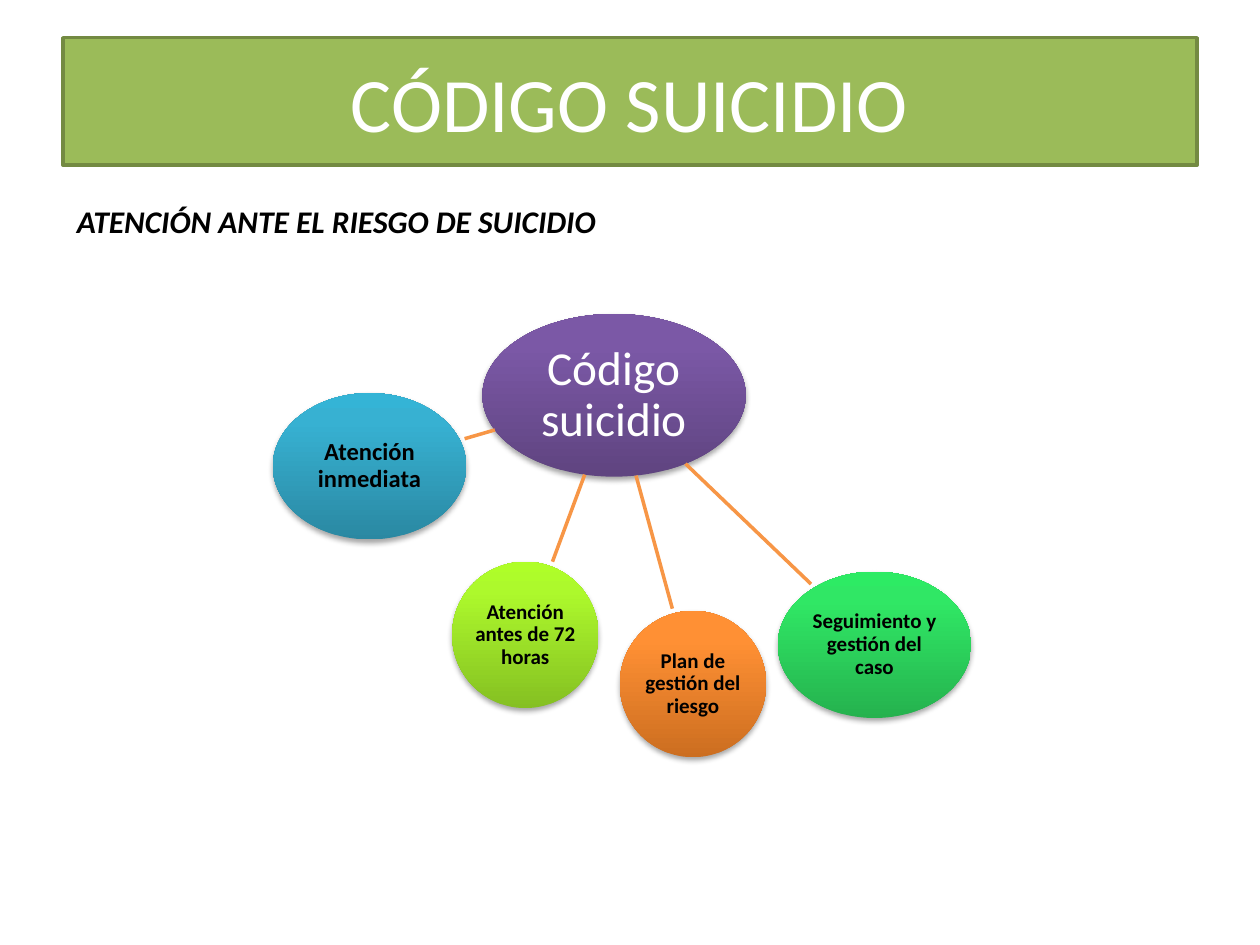
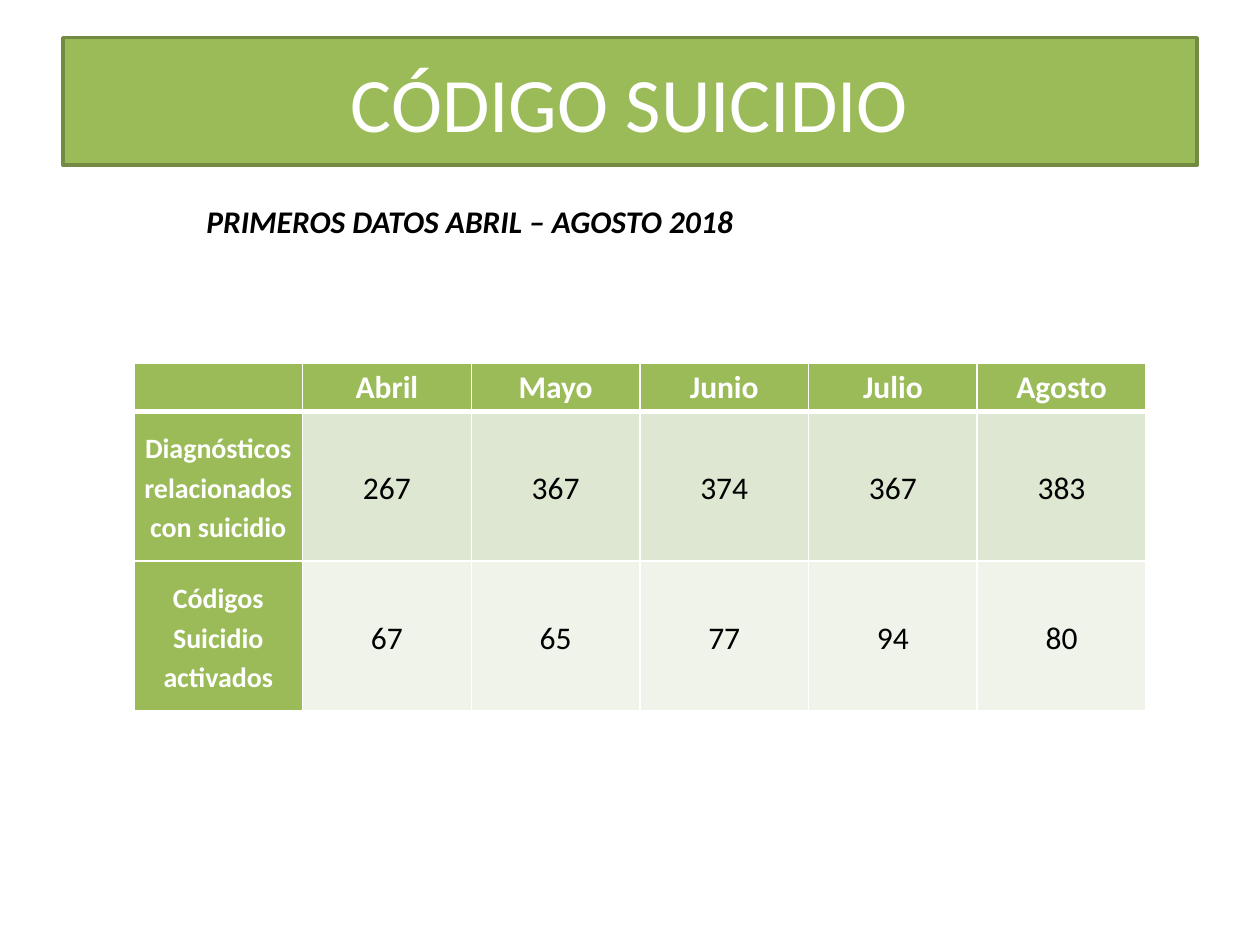
from copy import deepcopy
from math import hypot

from lxml.etree import SubElement
from pptx import Presentation
from pptx.dml.color import RGBColor
from pptx.enum.shapes import MSO_CONNECTOR as Connector, MSO_SHAPE as Shape
from pptx.enum.text import MSO_ANCHOR as Anchor, PP_ALIGN as Align
from pptx.oxml.ns import qn
from pptx.util import Cm, Pt

# Shared look
FONT = "Calibri"
WHITE = RGBColor(0xFF, 0xFF, 0xFF)
BLACK = RGBColor(0x00, 0x00, 0x00)
GREEN = RGBColor(0x9B, 0xBB, 0x59)
DARK_GREEN = RGBColor(0x73, 0x8A, 0x42)
ORANGE = RGBColor(0xF7, 0x96, 0x46)
ROW_FILLS = [RGBColor(0xDE, 0xE7, 0xD1), RGBColor(0xEF, 0xF3, 0xEA)]

# Gradient colours, from the bottom of the ellipse to its top
STOPS = (0, 0.8, 1)
PURPLE_BLEND = (RGBColor(0x5F, 0x44, 0x80), RGBColor(0x7B, 0x58, 0xA6), RGBColor(0x7C, 0x57, 0xA8))
BLUE_BLEND = (RGBColor(0x2A, 0x88, 0xA2), RGBColor(0x37, 0xB1, 0xD2), RGBColor(0x34, 0xB4, 0xD6))
LIME_BLEND = (RGBColor(0x85, 0xC0, 0x22), RGBColor(0xAD, 0xF9, 0x2C), RGBColor(0xAF, 0xFE, 0x28))
ORANGE_BLEND = (RGBColor(0xCC, 0x6E, 0x20), RGBColor(0xFF, 0x90, 0x34), RGBColor(0xFF, 0x91, 0x36))
GREEN_BLEND = (RGBColor(0x25, 0xB2, 0x4E), RGBColor(0x30, 0xE7, 0x65), RGBColor(0x2D, 0xEB, 0x64))

# Content: lengths in centimetres, ellipses as centre and size
TITLE = "CÓDIGO SUICIDIO"
CARE_HEADING = "ATENCIÓN ANTE EL RIESGO DE SUICIDIO"
DATA_HEADING = "PRIMEROS DATOS ABRIL – AGOSTO 2018"

HUB = {"text": "Código suicidio", "center": (12.38, 7.97), "size": (5.31, 3.28),
       "blend": PURPLE_BLEND, "font": {"size": Pt(27)}, "color": WHITE}
STEPS = [
    {"text": "Atención inmediata", "center": (7.45, 9.4), "size": (3.9, 2.95),
     "blend": BLUE_BLEND, "font": {"size": Pt(14), "bold": True}},
    {"text": "Atención antes de 72 horas", "center": (10.59, 12.8), "size": (2.95, 2.95),
     "blend": LIME_BLEND, "font": {"size": Pt(12), "bold": True}},
    {"text": "Plan de gestión del riesgo", "center": (13.97, 13.79), "size": (2.95, 2.95),
     "blend": ORANGE_BLEND, "font": {"size": Pt(12), "bold": True}},
    {"text": "Seguimiento y gestión del caso", "center": (17.63, 13), "size": (3.9, 2.95),
     "blend": GREEN_BLEND, "font": {"size": Pt(12), "bold": True}},
]
SPOKE_GAP = 0.1

MONTHLY_DATA = [
    ["", "Abril", "Mayo", "Junio", "Julio", "Agosto"],
    ["Diagnósticos relacionados con suicidio", "267", "367", "374", "367", "383"],
    ["Códigos Suicidio activados", "67", "65", "77", "94", "80"],
]
COLUMN_WIDTH = 3.4
ROW_HEIGHTS = (0.97, 3.02, 3.02)


def write(frame, text, color, font, align=Align.CENTER, spacing=None):
    para = frame.paragraphs[0]
    para.alignment = align
    para.line_spacing = spacing
    span = para.add_run()
    span.text = text
    span.font.color.rgb = color
    for name, value in {"name": FONT, **font}.items():
        setattr(span.font, name, value)


def set_margins(target, side, top):
    for name, value in {"left": side, "right": side, "top": top, "bottom": top}.items():
        setattr(target, f"margin_{name}", Cm(value))


def add_page(deck, heading, heading_left):
    """Add a page with the green title band and an italic heading."""
    page = deck.slides.add_slide(deck.slide_layouts[5])
    band = page.shapes.title
    for name, value in {"left": 1.27, "top": 0.76, "width": 22.86, "height": 2.57}.items():
        setattr(band, name, Cm(value))
    band.fill.solid()
    band.fill.fore_color.rgb = GREEN
    band.line.color.rgb = DARK_GREEN
    band.line.width = Pt(2)
    band.text_frame.vertical_anchor = Anchor.MIDDLE
    write(band.text_frame, TITLE, WHITE, {"size": Pt(44)})

    width = min(22.8, 25.4 - heading_left)
    box = page.shapes.add_textbox(Cm(heading_left), Cm(3.94), Cm(width), Cm(1.02))
    box.text_frame.word_wrap = True
    write(box.text_frame, heading, BLACK,
          {"size": Pt(18), "bold": True, "italic": True}, Align.LEFT)
    return page


def add_ellipse(page, node):
    (x, y), (width, height) = node["center"], node["size"]
    ellipse = page.shapes.add_shape(
        Shape.OVAL, Cm(x - width / 2), Cm(y - height / 2), Cm(width), Cm(height))
    ellipse.line.fill.background()

    # Three-stop gradient
    ellipse.fill.gradient()
    ellipse.fill.gradient_angle = 90
    properties = ellipse._element.spPr
    stop_list = properties.find(qn("a:gradFill")).find(qn("a:gsLst"))
    stop_list.append(deepcopy(stop_list[-1]))
    for stop, position, color in zip(ellipse.fill.gradient_stops, STOPS, node["blend"]):
        stop.position = position
        stop.color.rgb = color

    # Soft shadow below
    ellipse.shadow.inherit = False
    shadow = SubElement(properties.find(qn("a:effectLst")), qn("a:outerShdw"),
                        blurRad="40000", dist="23000", dir="5400000", rotWithShape="0")
    shade = SubElement(shadow, qn("a:srgbClr"), val=str(BLACK))
    SubElement(shade, qn("a:alpha"), val="35000")

    frame = ellipse.text_frame
    frame.word_wrap = True
    frame.vertical_anchor = Anchor.MIDDLE
    set_margins(frame, 0.03, 0.03)
    write(frame, node["text"], node.get("color", BLACK), node["font"], spacing=0.9)


def edge_distance(node, dx, dy):
    """Distance from the centre to the outline along a unit direction."""
    width, height = node["size"]
    return 1 / hypot(dx / (width / 2), dy / (height / 2))


def add_spoke(page, hub, step):
    (x1, y1), (x2, y2) = hub["center"], step["center"]
    length = hypot(x2 - x1, y2 - y1)
    dx, dy = (x2 - x1) / length, (y2 - y1) / length
    start = edge_distance(hub, dx, dy)
    end = length - edge_distance(step, dx, dy) - SPOKE_GAP
    spoke = page.shapes.add_connector(
        Connector.STRAIGHT, Cm(x1 + dx * start), Cm(y1 + dy * start),
        Cm(x1 + dx * end), Cm(y1 + dy * end))
    spoke.line.color.rgb = ORANGE
    spoke.line.width = Pt(2)
    SubElement(spoke._element.spPr, qn("a:effectLst"))


def add_borders(cell, row):
    widths = {"lnL": 1, "lnR": 1, "lnT": 3 if row == 1 else 1, "lnB": 3 if row == 0 else 1}
    for side, width in widths.items():
        line = SubElement(cell._tc.get_or_add_tcPr(), qn(f"a:{side}"), w=str(Pt(width)))
        SubElement(SubElement(line, qn("a:solidFill")), qn("a:srgbClr"), val=str(WHITE))


def add_data_table(page):
    columns = len(MONTHLY_DATA[0])
    table = page.shapes.add_table(
        len(MONTHLY_DATA), columns, Cm(2.7), Cm(7.32),
        Cm(COLUMN_WIDTH * columns), Cm(sum(ROW_HEIGHTS))).table
    for column in table.columns:
        column.width = Cm(COLUMN_WIDTH)
    for r, texts in enumerate(MONTHLY_DATA):
        table.rows[r].height = Cm(ROW_HEIGHTS[r])
        for c, text in enumerate(texts):
            cell = table.cell(r, c)
            label = r == 0 or c == 0
            add_borders(cell, r)
            cell.fill.solid()
            cell.fill.fore_color.rgb = GREEN if label else ROW_FILLS[r - 1]
            cell.vertical_anchor = Anchor.MIDDLE if r else Anchor.TOP
            set_margins(cell, 0.18, 0)
            if text:
                font = {"size": Pt(16 if c == 0 else 18), "bold": label}
                write(cell.text_frame, text, WHITE if label else BLACK, font, spacing=1.15)


def main():
    deck = Presentation()
    deck.slide_width, deck.slide_height = Cm(25.4), Cm(19.05)

    # Care steps around the hub
    page = add_page(deck, CARE_HEADING, 1.3)
    add_ellipse(page, HUB)
    for step in STEPS:
        add_spoke(page, HUB, step)
        add_ellipse(page, step)

    # Monthly figures
    page = add_page(deck, DATA_HEADING, 3.91)
    add_data_table(page)

    deck.save("out.pptx")


if __name__ == "__main__":
    main()
